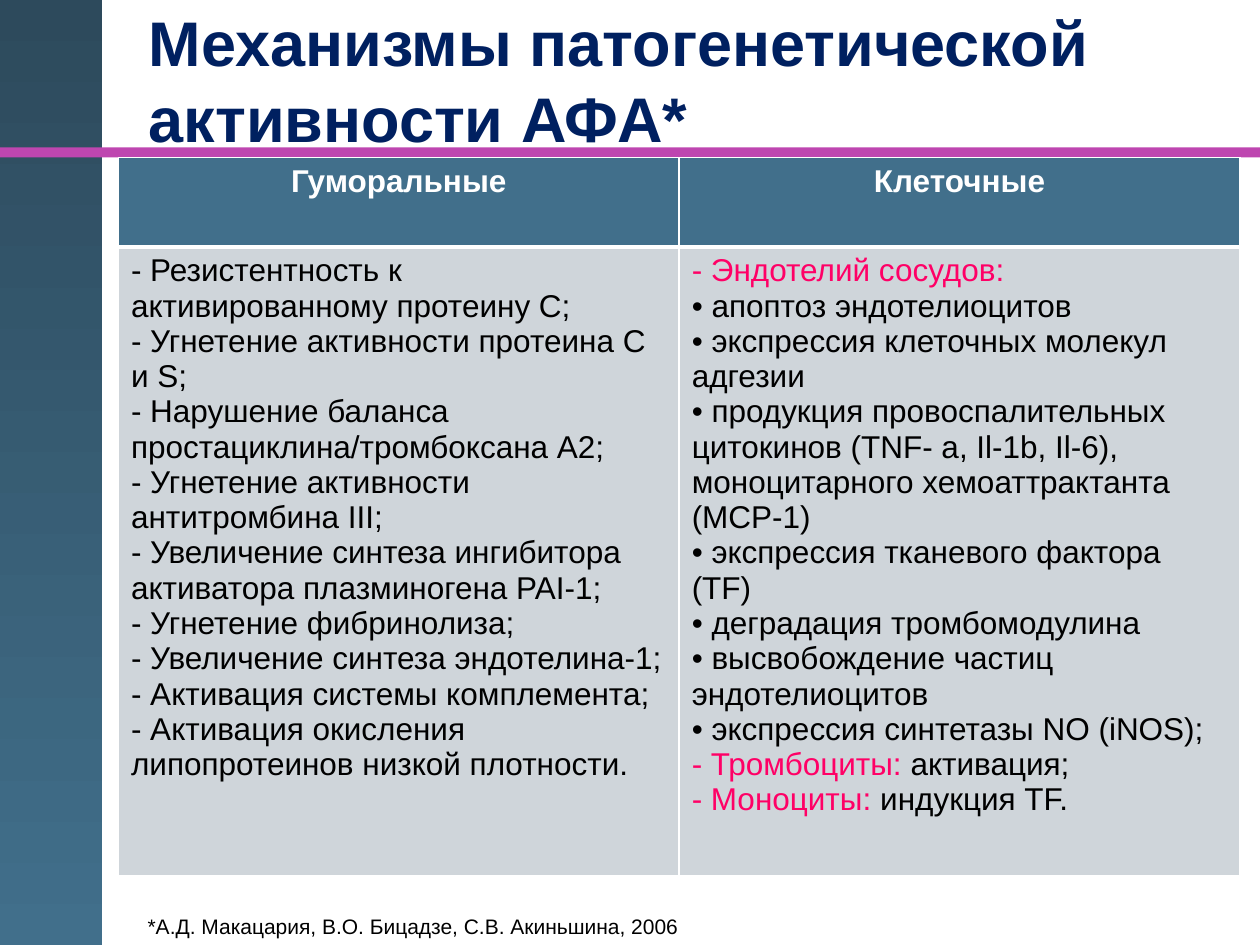
import dataclasses

import pptx
import pptx.dml.color
import pptx.enum.dml
import pptx.enum.shapes
import pptx.enum.text
import pptx.oxml
import pptx.oxml.ns
import pptx.util

Inches = pptx.util.Inches
ALIGN = pptx.enum.text.PP_ALIGN


@dataclasses.dataclass(frozen=True)
class Theme:
    """Colours, type sizes and font of the slide."""
    font: str = "Arial"
    title_size: int = 36
    table_size: int = 18
    source_size: int = 12
    title: str = "002060"
    text: str = "000000"
    white: str = "FFFFFF"
    accent: str = "FF0066"
    stripe: str = "BE46B0"
    band_top: str = "2D4A5C"
    header: str = "416F8B"
    body: str = "CFD5DA"


THEME = Theme()

HUMORAL = [[(line, THEME.text)] for line in (
    "- Резистентность к активированному протеину С;",
    "- Угнетение активности протеина С и S;",
    "- Нарушение баланса простациклина/тромбоксана А2;",
    "- Угнетение активности антитромбина III;",
    "- Увеличение синтеза ингибитора активатора плазминогена PAI-1;",
    "- Угнетение фибринолиза;",
    "- Увеличение синтеза эндотелина-1;",
    "- Активация системы комплемента;",
    "- Активация окисления липопротеинов низкой плотности.",
)]

ENDOTHELIUM = [[(line, THEME.text)] for line in (
    "• апоптоз эндотелиоцитов",
    "• экспрессия клеточных молекул адгезии",
    "• продукция провоспалительных цитокинов (TNF- a, Il-1b, Il-6),",
    "моноцитарного хемоаттрактанта (MCP-1)",
    "• экспрессия тканевого фактора (TF)",
    "• деградация тромбомодулина",
    "• высвобождение частиц эндотелиоцитов",
    "• экспрессия синтетазы NO (iNOS);",
)]

CELLULAR = [
    [("- Эндотелий сосудов:", THEME.accent)],
    *ENDOTHELIUM,
    [("- Тромбоциты: ", THEME.accent), ("активация;", THEME.text)],
    [("- Моноциты: ", THEME.accent), ("индукция TF.", THEME.text)],
]


def rgb(value):
    """Turn a hex string into a colour."""
    return pptx.dml.color.RGBColor.from_string(value)


def add_run(p, text, size, color, bold=False):
    """Add one formatted run to a paragraph."""
    r = p.add_run()
    r.text = text
    r.font.name = THEME.font
    r.font.size = pptx.util.Pt(size)
    r.font.bold = bold
    r.font.color.rgb = rgb(color)


def add_bar(slide, left, top, width, height):
    """Add a plain rectangle without line or shadow."""
    sp = slide.shapes.add_shape(
        pptx.enum.shapes.MSO_SHAPE.RECTANGLE,
        Inches(left), Inches(top), Inches(width), Inches(height))
    sp.shadow.inherit = False
    sp.line.fill.background()
    return sp


def add_decoration(slide):
    """Add the gradient side band and the stripe under the title."""
    band = add_bar(slide, 0, 0, 0.81, 7.5)
    band.fill.gradient()
    band.fill.gradient_angle = 270
    for stop, color in zip(band.fill.gradient_stops, (THEME.band_top, THEME.header)):
        stop.color.rgb = rgb(color)
    stripe = add_bar(slide, 0, 1.17, 10, 0.08)
    stripe.fill.solid()
    stripe.fill.fore_color.rgb = rgb(THEME.stripe)


def set_title(slide, text):
    """Place and fill the title placeholder."""
    sp = slide.shapes.title
    sp.left, sp.top, sp.width, sp.height = map(Inches, (1.08, 0.17, 8.58, 0.92))
    tf = sp.text_frame
    tf.word_wrap = True
    tf.auto_size = pptx.enum.text.MSO_AUTO_SIZE.NONE
    tf.vertical_anchor = pptx.enum.text.MSO_ANCHOR.MIDDLE
    p = tf.paragraphs[0]
    p.alignment = ALIGN.LEFT
    add_run(p, text, THEME.title_size, THEME.title, bold=True)


def set_borders(cell, bottom):
    """Give a cell white borders, with its own bottom width in points."""
    tc_pr = cell._tc.get_or_add_tcPr()
    for i, (side, width) in enumerate(zip("LRTB", (1, 1, 1, bottom))):
        tc_pr.insert(i, pptx.oxml.parse_xml(
            f'<a:ln{side} {pptx.oxml.ns.nsdecls("a")} w="{pptx.util.Pt(width)}">'
            f'<a:solidFill><a:srgbClr val="{THEME.white}"/></a:solidFill></a:ln{side}>'))


def fill_cell(cell, lines, fill, align, bold=False, bottom=1):
    """Write lines of coloured runs into a cell and style it."""
    cell.fill.solid()
    cell.fill.fore_color.rgb = rgb(fill)
    set_borders(cell, bottom)
    p = cell.text_frame.paragraphs[0]
    p.alignment = align
    for i, line in enumerate(lines):
        if i:
            p.add_line_break()
        for text, color in line:
            add_run(p, text, THEME.table_size, color, bold)


def add_mechanisms(slide, columns):
    """Add the table with one column per kind of mechanism."""
    heights = (0.71, 4.99)
    table = slide.shapes.add_table(
        2, len(columns), Inches(0.94), Inches(1.25),
        Inches(8.9), Inches(sum(heights))).table
    for row, height in zip(table.rows, heights):
        row.height = Inches(height)
    for i, (heading, lines) in enumerate(columns):
        fill_cell(table.cell(0, i), [[(heading, THEME.white)]], THEME.header,
                  ALIGN.CENTER, bold=True, bottom=3)
        fill_cell(table.cell(1, i), lines, THEME.body, ALIGN.LEFT)


def add_source(slide, text):
    """Add the reference line below the table."""
    sp = slide.shapes.add_textbox(Inches(0.78), Inches(7.2), Inches(5), Inches(0.3))
    tf = sp.text_frame
    tf.word_wrap = True
    tf.auto_size = pptx.enum.text.MSO_AUTO_SIZE.SHAPE_TO_FIT_TEXT
    p = tf.paragraphs[0]
    p.alignment = ALIGN.CENTER
    add_run(p, text, THEME.source_size, THEME.text)


def main():
    """Build and save the slide."""
    prs = pptx.Presentation()
    prs.slide_width, prs.slide_height = Inches(10), Inches(7.5)
    slide = prs.slides.add_slide(prs.slide_layouts[5])
    add_decoration(slide)
    set_title(slide, "Механизмы патогенетической активности АФА*")
    add_mechanisms(slide, [("Гуморальные", HUMORAL), ("Клеточные", CELLULAR)])
    add_source(slide, "*А.Д. Макацария, В.О. Бицадзе, С.В. Акиньшина, 2006")
    prs.save("out.pptx")


if __name__ == "__main__":
    main()
